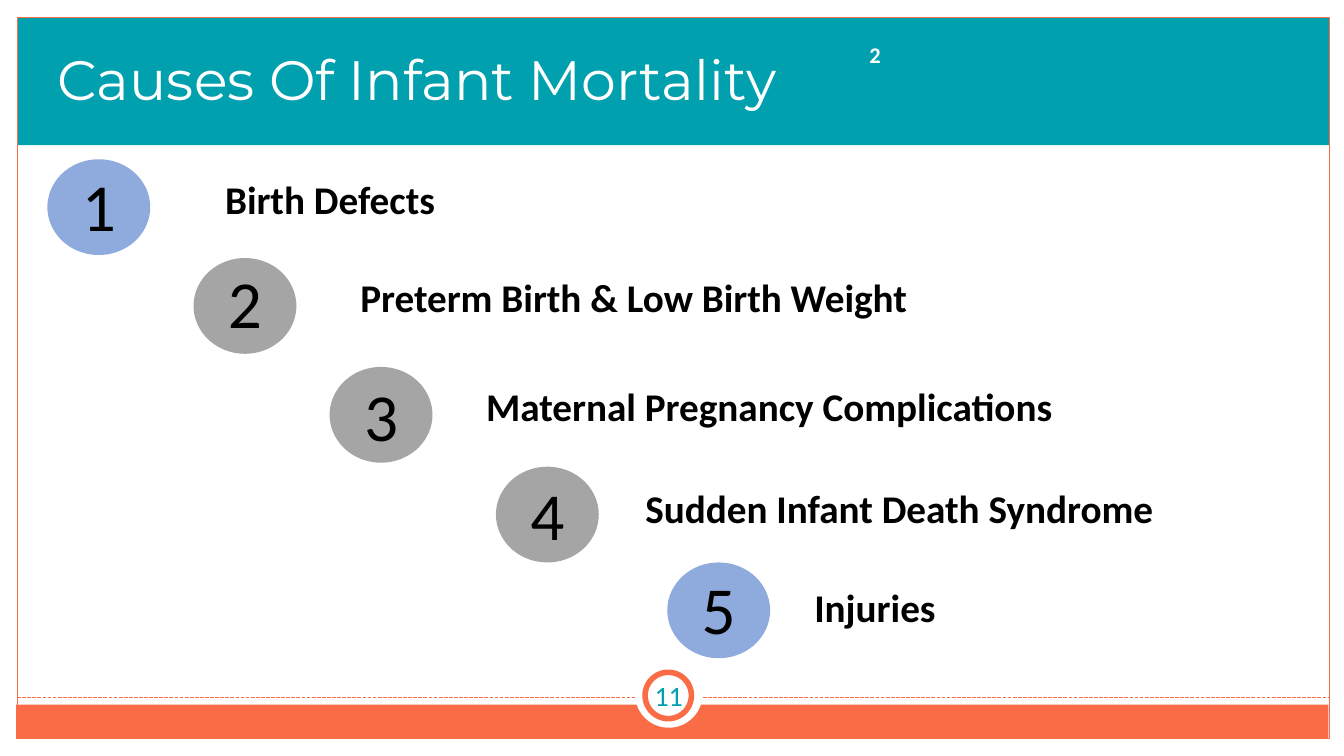
from dataclasses import dataclass

from lxml.etree import SubElement
from pptx import Presentation
from pptx.dml.color import RGBColor
from pptx.enum.dml import MSO_LINE
from pptx.enum.shapes import MSO_CONNECTOR, MSO_SHAPE
from pptx.enum.text import MSO_ANCHOR, MSO_AUTO_SIZE, PP_ALIGN
from pptx.oxml.ns import qn
from pptx.shapes.autoshape import Shape
from pptx.slide import Slide
from pptx.util import Pt

TEAL = RGBColor(0x00, 0xA0, 0xAF)
ORANGE = RGBColor(0xF9, 0x6C, 0x45)
BLUE = RGBColor(0x8F, 0xAA, 0xDC)
GRAY = RGBColor(0xA5, 0xA5, 0xA5)
WHITE = RGBColor(0xFF, 0xFF, 0xFF)
BLACK = RGBColor(0x00, 0x00, 0x00)

BODY_FONT = "Calibri"
TITLE_FONT = "Montserrat"
CIRCLE_WIDTH, CIRCLE_HEIGHT = 73.44, 68.4
DIGIT_HEIGHT, LABEL_HEIGHT = 65.52, 41.04


@dataclass(frozen=True)
class Box:
    left: float
    top: float
    width: float
    height: float

    def emu(self) -> tuple[Pt, Pt, Pt, Pt]:
        return Pt(self.left), Pt(self.top), Pt(self.width), Pt(self.height)


@dataclass(frozen=True)
class Cause:
    label: str
    color: RGBColor
    circle_left: float
    circle_top: float
    digit_top: float
    label_left: float
    label_top: float
    label_width: float


CAUSES = [
    Cause("Birth Defects", BLUE, 33.84, 113.76, 113.76, 108.72, 121.68, 254.16),
    Cause("Preterm Birth & Low Birth Weight", GRAY, 138.24, 184.32, 182.88, 186.48, 191.52, 532.08),
    Cause("Maternal Pregnancy Complications", GRAY, 235.44, 262.08, 263.52, 325.44, 269.28, 447.84),
    Cause("Sudden Infant Death Syndrome", GRAY, 354.24, 333.36, 334.8, 390.96, 342.72, 502.56),
    Cause("Injuries", BLUE, 476.64, 401.76, 401.76, 557.28, 413.28, 135.36),
]


def add_figure(slide: Slide, kind: MSO_SHAPE, box: Box, fill: RGBColor | None = None,
               line: RGBColor | None = None, line_width: float = 0.75) -> Shape:
    figure = slide.shapes.add_shape(kind, *box.emu())
    figure.shadow.inherit = False
    if fill is None:
        figure.fill.background()
    else:
        figure.fill.solid()
        figure.fill.fore_color.rgb = fill
    if line is None:
        figure.line.fill.background()
    else:
        figure.line.color.rgb = line
        figure.line.width = Pt(line_width)
    return figure


def add_text(slide: Slide, text: str, box: Box, size: float, color: RGBColor = BLACK,
             bold: bool = False, fit: bool = True) -> Shape:
    caption = slide.shapes.add_textbox(*box.emu())
    frame = caption.text_frame
    frame.word_wrap = True
    frame.auto_size = MSO_AUTO_SIZE.SHAPE_TO_FIT_TEXT if fit else MSO_AUTO_SIZE.NONE
    paragraph = frame.paragraphs[0]
    paragraph.alignment = PP_ALIGN.CENTER
    style_run(paragraph.add_run(), text, BODY_FONT, size, color, bold)
    return caption


def style_run(run, text: str, font: str, size: float, color: RGBColor, bold: bool = False) -> None:
    run.text = text
    run.font.name = font
    run.font.size = Pt(size)
    run.font.color.rgb = color
    run.font.bold = bold


def add_frame(slide: Slide) -> None:
    add_figure(slide, MSO_SHAPE.RECTANGLE, Box(12.24, 12.96, 937.44, 90.72), TEAL)
    add_figure(slide, MSO_SHAPE.RECTANGLE, Box(11.52, 503.28, 937.44, 24.48), ORANGE)
    add_figure(slide, MSO_SHAPE.RECTANGLE, Box(12.24, 12.24, 937.44, 515.52), line=ORANGE)

    footer_rule = slide.shapes.add_connector(
        MSO_CONNECTOR.STRAIGHT, Pt(12.24), Pt(498.24), Pt(948.96), Pt(498.24))
    footer_rule.line.color.rgb = ORANGE
    footer_rule.line.width = Pt(0.9)
    footer_rule.line.dash_style = MSO_LINE.SQUARE_DOT
    SubElement(footer_rule.element.spPr, qn("a:effectLst"))

    # Page number badge
    add_figure(slide, MSO_SHAPE.OVAL, Box(453.6, 471.6, 48.24, 48.24), WHITE)
    add_figure(slide, MSO_SHAPE.OVAL, Box(460.8, 480.24, 33.12, 33.12), WHITE, ORANGE, 4)
    page_number = add_text(slide, "11", Box(447.12, 479.52, 61.2, 34.56), 20, TEAL, fit=False)
    page_number.text_frame.vertical_anchor = MSO_ANCHOR.MIDDLE


def add_title(slide: Slide) -> None:
    title = slide.shapes.title
    title.left, title.top, title.width, title.height = Box(33.84, 33.84, 724.32, 33.84).emu()
    frame = title.text_frame
    frame.auto_size = MSO_AUTO_SIZE.NONE
    frame.vertical_anchor = MSO_ANCHOR.TOP
    paragraph = frame.paragraphs[0]
    paragraph.alignment = PP_ALIGN.LEFT
    paragraph.line_spacing = 0.9
    style_run(paragraph.add_run(), "Causes Of Infant Mortality", TITLE_FONT, 39.6, WHITE)
    # Bring the title in front of the header band
    title.element.getparent().append(title.element)


def add_cause(slide: Slide, number: int, cause: Cause) -> None:
    add_figure(slide, MSO_SHAPE.FLOWCHART_CONNECTOR,
               Box(cause.circle_left, cause.circle_top, CIRCLE_WIDTH, CIRCLE_HEIGHT), cause.color)
    add_text(slide, cause.label,
             Box(cause.label_left, cause.label_top, cause.label_width, LABEL_HEIGHT), 28, bold=True)
    add_text(slide, str(number),
             Box(cause.circle_left, cause.digit_top, CIRCLE_WIDTH, DIGIT_HEIGHT), 48)


def main() -> None:
    presentation = Presentation()
    presentation.slide_width, presentation.slide_height = Pt(960), Pt(540)
    slide = presentation.slides.add_slide(presentation.slide_layouts.get_by_name("Title Only"))

    add_frame(slide)
    add_title(slide)
    for number, cause in enumerate(CAUSES, start=1):
        add_cause(slide, number, cause)

    # Reference mark beside the title
    add_text(slide, "2", Box(599.76, 25.92, 50.4, 26.64), 16, WHITE, bold=True)

    presentation.save("out.pptx")


if __name__ == "__main__":
    main()
